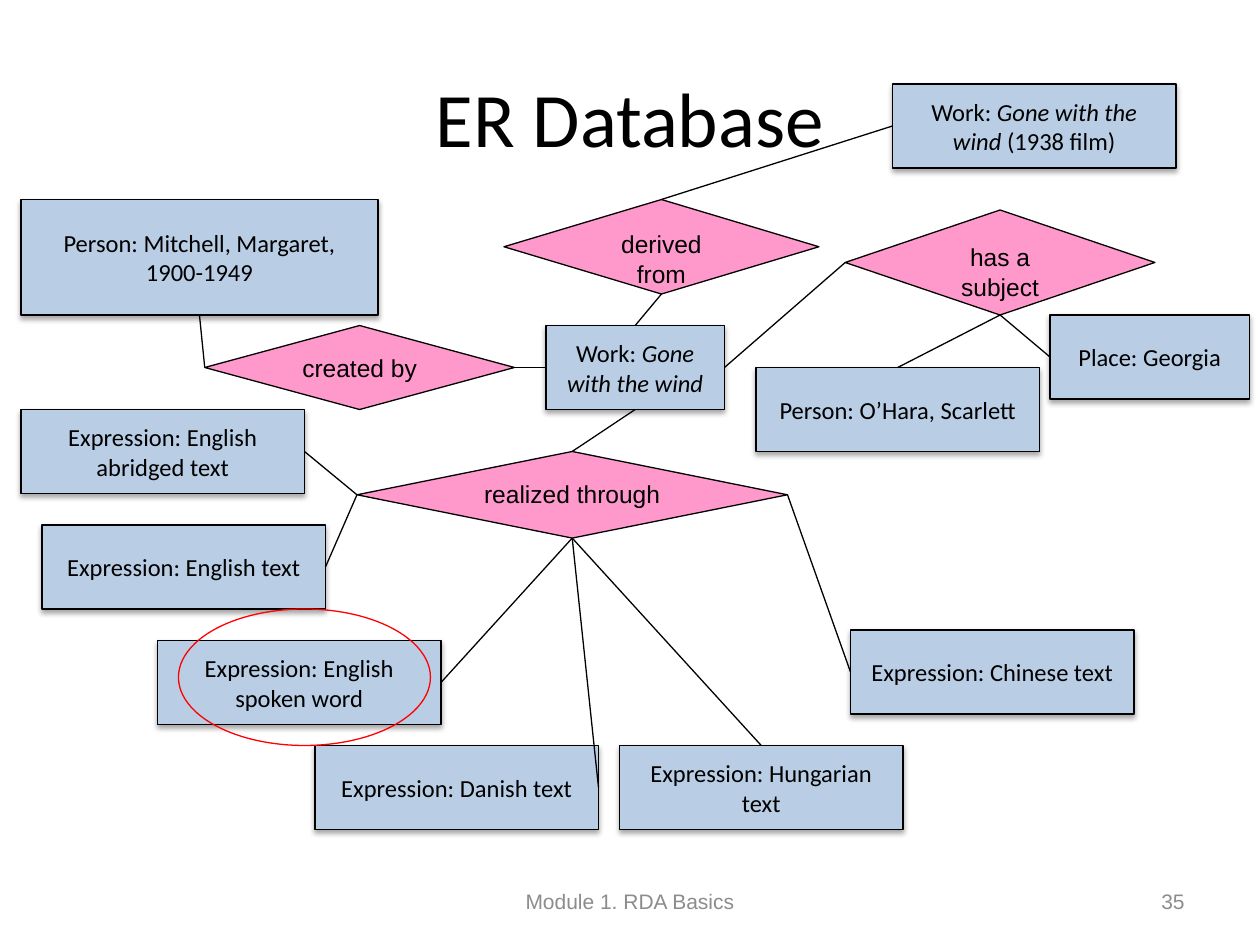
from pptx import Presentation
from pptx.dml.color import RGBColor
from pptx.enum.shapes import MSO_CONNECTOR, MSO_SHAPE
from pptx.enum.text import MSO_ANCHOR, PP_ALIGN
from pptx.oxml import parse_xml
from pptx.oxml.ns import qn
from pptx.util import Inches, Pt

COLORS = {"entity": "B9CDE5", "relation": "FF99CC", "ink": "000000",
          "highlight": "FF0000", "footer": "8C8C8C"}
DRAWING_NS = 'xmlns:a="http://schemas.openxmlformats.org/drawingml/2006/main"'
SHADOW = (f'<a:outerShdw {DRAWING_NS} blurRad="40000" dist="23000" dir="5400000" '
          'rotWithShape="0"><a:srgbClr val="000000"><a:alpha val="35000"/>'
          '</a:srgbClr></a:outerShdw>')
UNIT = Inches(1) / 12  # the diagram sits on a grid of twelve units to the inch
TOP, LEFT, BOTTOM, RIGHT = range(4)  # connection sites
W, H = 27, 8  # usual entity size in grid units

# name: (left, top, width, height, text runs); every second run is italic
ENTITIES = {
    "novel": (52, 31, 17, H, ["Work: ", "Gone with the wind"]),
    "film": (85, 8, W, H, ["Work: ", "Gone with the wind ", "(1938 film)"]),
    "scarlett": (72, 35, W, H, ["Person: O’Hara, Scarlett"]),
    "georgia": (100, 30, 19, H, ["Place: Georgia"]),
    "hungarian": (59, 71, W, H, ["Expression: Hungarian text"]),
    "danish": (30, 71, W, H, ["Expression: Danish text"]),
    "english": (4, 50, W, H, ["Expression: English text"]),
    "abridged": (2, 39, W, H, ["Expression: English abridged text"]),
    "chinese": (81, 60, W, H, ["Expression: Chinese text"]),
    "spoken": (15, 61, W, H, ["Expression: English spoken word"]),
    "author": (2, 19, 34, 11, ["Person: Mitchell, Margaret, 1900-1949"]),
}
RELATIONS = {
    "created": (19.5, 31, 29.5, 8, ["created by"]),
    "subject": (80.5, 20, 29.5, 10, ["has a subject"]),
    "realized": (34, 43, 41, 8.25, ["realized through"]),
    "derived": (48, 19, 30, 9, ["derived from"]),
}
LINKS = [
    ("novel", LEFT, "created", RIGHT), ("created", LEFT, "author", BOTTOM),
    ("subject", LEFT, "novel", RIGHT), ("subject", BOTTOM, "scarlett", TOP),
    ("subject", BOTTOM, "georgia", LEFT), ("derived", TOP, "film", LEFT),
    ("novel", TOP, "derived", BOTTOM), ("realized", TOP, "novel", BOTTOM),
    ("realized", LEFT, "abridged", RIGHT), ("realized", LEFT, "english", RIGHT),
    ("realized", BOTTOM, "spoken", RIGHT), ("realized", BOTTOM, "danish", RIGHT),
    ("realized", BOTTOM, "hungarian", TOP), ("realized", RIGHT, "chinese", LEFT),
]


def color(name):
    return RGBColor.from_string(COLORS[name])


def grid(*units):
    return [round(unit * UNIT) for unit in units]


def write(shape, runs, font, size, ink="ink", align=PP_ALIGN.CENTER,
          anchor=MSO_ANCHOR.MIDDLE):
    frame = shape.text_frame
    frame.word_wrap = True
    frame.vertical_anchor = anchor
    para = frame.paragraphs[0]
    para.alignment = align
    para.font.name, para.font.size = font, Pt(size)
    para.font.color.rgb = color(ink)
    for index, text in enumerate(runs):
        span = para.add_run()
        span.text = text
        if index % 2:
            span.font.italic = True


def add_outline(page, kind, place, line="ink", fill=None):
    shape = page.shapes.add_shape(kind, *grid(*place))
    shape.shadow.inherit = False
    if fill:
        shape.fill.solid()
        shape.fill.fore_color.rgb = color(fill)
    else:
        shape.fill.background()
    shape.line.color.rgb = color(line)
    shape.line.width = Pt(0.75)
    return shape


def add_entity(page, *place, runs):
    shape = add_outline(page, MSO_SHAPE.FLOWCHART_PROCESS, place, fill="entity")
    shape.element.spPr.find(qn("a:effectLst")).append(parse_xml(SHADOW))
    write(shape, runs, "Calibri", 14)
    return shape


def add_relation(page, *place, runs):
    shape = add_outline(page, MSO_SHAPE.FLOWCHART_DECISION, place, fill="relation")
    write(shape, runs, "Arial", 14, anchor=MSO_ANCHOR.TOP)
    return shape


def add_link(page, start, start_site, end, end_site):
    link = page.shapes.add_connector(MSO_CONNECTOR.STRAIGHT, 0, 0, 0, 0)
    link.begin_connect(start, start_site)
    link.end_connect(end, end_site)
    link.line.color.rgb = color("ink")
    link.line.width = Pt(0.75)
    link.element.spPr.append(parse_xml(f"<a:effectLst {DRAWING_NS}/>"))


def add_diagram(page):
    nodes = {}
    for table, add_node in ((RELATIONS, add_relation), (ENTITIES, add_entity)):
        for name, (*place, runs) in table.items():
            nodes[name] = add_node(page, *place, runs=runs)
    for start, start_site, end, end_site in LINKS:
        add_link(page, nodes[start], start_site, nodes[end], end_site)
    # Ring around the spoken word expression
    add_outline(page, MSO_SHAPE.OVAL, (17, 58, 24, 13), line="highlight")


def add_title(page, text, left, top, width, height):
    title = page.shapes.title
    title.left, title.top, title.width, title.height = grid(left, top, width, height)
    write(title, [text], "Calibri", 44)


def add_footer(page, top, height):
    for text, left, width, align in (
            ("Module 1. RDA Basics", 41, 38, PP_ALIGN.CENTER),
            ("35", 86, 28, PP_ALIGN.RIGHT)):
        box = page.shapes.add_textbox(*grid(left, top, width, height))
        write(box, [text], "Arial", 12, "footer", align)


def main():
    deck = Presentation()
    deck.slide_width, deck.slide_height = Inches(10), Inches(7.5)
    page = deck.slides.add_slide(deck.slide_layouts[5])
    add_title(page, "ER Database", 6, 3.6, 108, 15)
    add_diagram(page)
    add_footer(page, 83.4, 4.8)
    deck.save("out.pptx")


if __name__ == "__main__":
    main()
